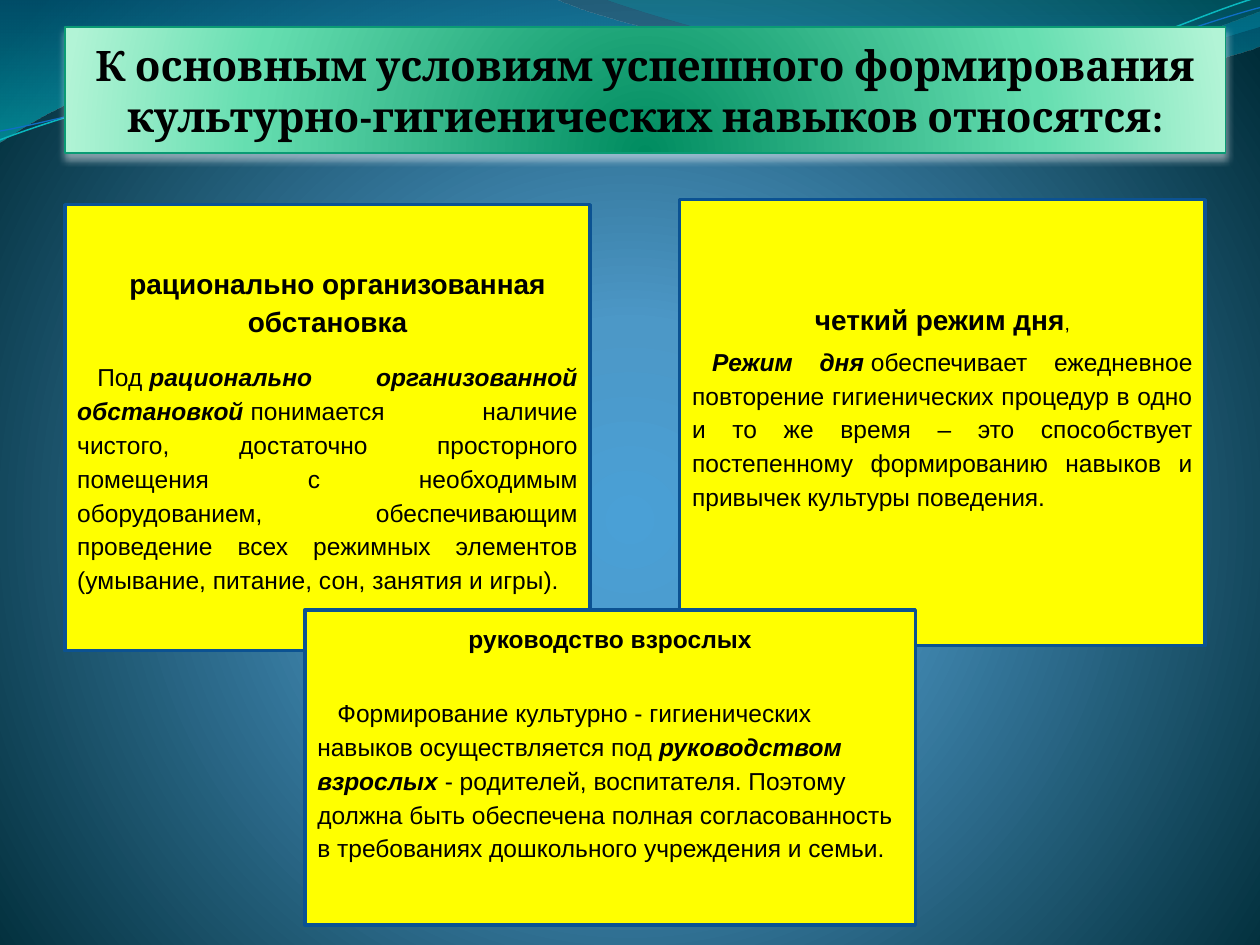
import math

from lxml import etree
from pptx import Presentation
from pptx import util as u
from pptx.dml.color import RGBColor
from pptx.enum import shapes, text
from pptx.oxml.ns import qn

BLACK = RGBColor(0x00, 0x00, 0x00)
WHITE = RGBColor(0xFF, 0xFF, 0xFF)
YELLOW = RGBColor(0xFF, 0xFF, 0x00)
NAVY = RGBColor(0x0B, 0x52, 0x92)
SKY = RGBColor(0x4A, 0xA0, 0xD6)
STEEL = RGBColor(0x4C, 0x98, 0xC7)
DEEP = RGBColor(0x00, 0x2C, 0x38)
OCEAN = RGBColor(0x00, 0x74, 0xA1)
CYAN = RGBColor(0x00, 0xC6, 0xCF)
TEAL = RGBColor(0x00, 0xA1, 0xA9)
AZURE = RGBColor(0x00, 0x8B, 0xBF)
AQUA = RGBColor(0x0A, 0xB8, 0xBF)
BLUE = RGBColor(0x0F, 0x6F, 0xC6)
GREEN = RGBColor(0x00, 0x8C, 0x60)
MINT = RGBColor(0x65, 0xDE, 0xB0)
PALE = RGBColor(0xB2, 0xF4, 0xD6)
EMERALD = RGBColor(0x0A, 0x9B, 0x74)

COLUMNS, ROWS = 100, 75
PLAIN, BOLD, STRONG = (False, False), (True, False), (True, True)
HARD_SPACE = chr(160)


def add_node(parent, tag, **attributes):
    return etree.SubElement(parent, qn(tag), {k: str(v) for k, v in attributes.items()})


def add_color(parent, color, opacity):
    node = add_node(parent, "a:srgbClr", val=color)
    if opacity < 100:
        add_node(node, "a:alpha", val=opacity * 1000)


def gradient(stops, focus=None):
    fill = etree.Element(qn("a:gradFill"), {"rotWithShape": "1"})
    stop_list = add_node(fill, "a:gsLst")
    for position, color, opacity in stops:
        add_color(add_node(stop_list, "a:gs", pos=position * 1000), color, opacity)
    if focus:
        area = add_node(fill, "a:path", path="circle")
        sides = {side: share * 1000 for side, share in zip("ltrb", focus)}
        add_node(area, "a:fillToRect", **sides)
    else:
        add_node(fill, "a:lin", ang=5400000, scaled=0)
    return fill


def turn(point, center, degrees):
    angle = math.radians(degrees)
    x, y = point[0] - center[0], point[1] - center[1]
    return (center[0] + x * math.cos(angle) - y * math.sin(angle),
            center[1] + x * math.sin(angle) + y * math.cos(angle))


class SlideBuilder:
    body_font = "Arial"
    title_font = "Cambria"
    spacing = 1.15
    indent = u.Inches(0.16)
    tilt = 2.7

    def __init__(self, deck):
        self.page = deck.slides.add_slide(deck.slide_layouts[6])
        self.column = deck.slide_width / COLUMNS
        self.row = deck.slide_height / ROWS

    def place(self, x, y):
        return round(x * self.column), round(y * self.row)

    def paint(self, shape, fill):
        shape.fill.gradient()
        old = shape._element.spPr.find(qn("a:gradFill"))
        old.getparent().replace(old, fill)

    def backdrop(self, stops, focus):
        self.page.background.fill.solid()
        holder = self.page.element.find(".//" + qn("p:bgPr"))
        holder.replace(holder[0], gradient(stops, focus))

    def outline(self, start, segments, close):
        points = [self.place(*point) for segment in segments for point in segment]
        builder = self.page.shapes.build_freeform(*self.place(*start))
        builder.add_line_segments(points, close=close)
        shape = builder.convert_to_shape()
        shape.shadow.inherit = False
        steps = iter(list(shape._element.iter(qn("a:lnTo"))))
        for segment in segments:
            nodes = [next(steps) for _ in segment]
            if len(nodes) == 3:
                curve = etree.Element(qn("a:cubicBezTo"))
                nodes[0].addprevious(curve)
                for node in nodes:
                    curve.append(node[0])
                    node.getparent().remove(node)
        return shape

    def wave(self, start, segments, fill):
        shape = self.outline(start, segments, True)
        self.paint(shape, fill)
        shape.line.fill.background()

    def ripple(self, start, curves, center, color, width):
        curves = [[turn(point, center, self.tilt) for point in curve] for curve in curves]
        shape = self.outline(turn(start, center, self.tilt), curves, False)
        shape.rotation = 360 - self.tilt
        shape.fill.background()
        shape.line.color.rgb = color
        shape.line.width = u.Pt(width)

    def panel(self, x, y, width, height, line=NAVY, weight=2):
        box = self.page.shapes.add_shape(
            shapes.MSO_SHAPE.RECTANGLE, *self.place(x, y), *self.place(width, height))
        box.shadow.inherit = False
        box.fill.solid()
        box.fill.fore_color.rgb = YELLOW
        box.line.color.rgb = line
        box.line.width = u.Pt(weight)
        box.text_frame.word_wrap = True
        box.text_frame.vertical_anchor = text.MSO_ANCHOR.MIDDLE
        return box

    def paragraph(self, box, spans, align, before=0, after=0, indent=0, spacing=spacing, font=body_font):
        frame = box.text_frame
        para = frame.add_paragraph() if frame.text else frame.paragraphs[0]
        para.alignment = align
        para.line_spacing = spacing
        para.space_before = u.Pt(before)
        para.space_after = u.Pt(after)
        para._p.get_or_add_pPr().set("indent", str(int(indent)))
        for words, size, (bold, italic) in spans:
            span = para.add_run()
            span.text = words
            span.font.name = font
            span.font.size = u.Pt(size)
            span.font.bold = bold
            span.font.italic = italic
            span.font.color.rgb = BLACK

    def body(self, box, spans, align, before=3.8):
        self.paragraph(box, spans, align, before, 7.5, self.indent)

    def shade(self, box, color, opacity, blur, distance):
        effects = box._element.spPr.find(qn("a:effectLst"))
        shadow = add_node(effects, "a:outerShdw", blurRad=u.Pt(blur), dist=u.Pt(distance),
                          dir=5400000, rotWithShape=0)
        add_color(shadow, color, opacity)


def main():
    deck = Presentation()
    deck.slide_width, deck.slide_height = u.Inches(10), u.Inches(7.5)
    slide = SlideBuilder(deck)
    left, center, justify = text.PP_ALIGN.LEFT, text.PP_ALIGN.CENTER, text.PP_ALIGN.JUSTIFY

    slide.backdrop([(0, SKY, 100), (25, STEEL, 100), (100, DEEP, 100)], (10, 110, 10, 100))
    slide.wave((0, 0), [
        [(44, -0.1)],
        [(47.6, 1.7), (66.4, 6.3), (75.8, 6.3)], [(85.3, 6.3), (95.8, 2.6), (100, 0.9)],
        [(100.1, 3.6)],
        [(98.3, 4.4), (87, 7.6), (74.6, 7.5)], [(62.2, 7.5), (38.2, 2.8), (25.7, 3.4)],
        [(12.9, 3.6), (4.6, 8.3), (-0.1, 11.3)], [(0, 0)]],
        gradient([(0, OCEAN, 45), (100, CYAN, 55)]))
    slide.wave((47.9, -0.1), [
        [(50.9, 1.1), (68.2, 6.2), (76.9, 6.5)], [(85.6, 6.9), (96.1, 3.2), (100, 2.1)],
        [(100, 0)], [(47.9, -0.1)]],
        gradient([(0, TEAL, 30), (80, AZURE, 45)]))
    slide.ripple((0, 11.1), [
        [(4.8, 9.3), (15.8, 5.7), (27.7, 5.2)], [(39.5, 4.7), (59.3, 8.9), (71.3, 8)],
        [(83.3, 7.1), (93.8, 1.5), (99.8, -0.2)]], (49.9, 5.75), AQUA, 0.85)
    slide.ripple((0, 10.4), [
        [(4.7, 9.6), (16.4, 6.1), (28.3, 5.6)], [(40.3, 5.1), (59.7, 8.4), (71.7, 7.5)],
        [(83.6, 6.7), (94.1, 2.1), (100, 0.6)]], (49.95, 5.9), BLUE, 0.75)

    setting = slide.panel(5.15, 16.25, 41.7, 35.4)
    slide.body(setting, [("рационально организованная обстановка", 16, BOLD)], center)
    slide.body(setting, [
        ("Под" + HARD_SPACE, 14, PLAIN),
        ("рационально организованной обстановкой", 14, STRONG),
        (HARD_SPACE + "понимается наличие чистого, достаточно просторного помещения с "
         "необходимым оборудованием, обеспечивающим проведение всех режимных элементов "
         "(умывание, питание, сон, занятия и игры).", 14, PLAIN)], justify)

    title = slide.panel(5.15, 2.15, 92.1, 10, EMERALD, 0.75)
    slide.paint(title, gradient([(0, GREEN, 100), (68, MINT, 100), (100, PALE, 100)],
                                (50, 130, 50, -30)))
    slide.shade(title, WHITE, 48, 4.5, 3)
    slide.paragraph(title, [("К основным условиям успешного формирования "
                             "культурно-гигиенических навыков относятся:", 24, BOLD)],
                    center, spacing=1.0, font=slide.title_font)

    routine = slide.panel(53.95, 15.85, 41.7, 35.4)
    routine.text_frame.margin_bottom = u.Inches(0.34)
    slide.paragraph(routine, [("четкий режим дня", 16, BOLD), (",", 11, PLAIN)], center)
    slide.body(routine, [
        ("Режим дня", 14, STRONG),
        (HARD_SPACE + "обеспечивает ежедневное повторение гигиенических процедур в одно и то "
         "же время – это способствует постепенному формированию навыков и привычек "
         "культуры поведения.", 14, PLAIN)], justify)

    guidance = slide.panel(24.2, 48.4, 48.45, 25)
    guidance.text_frame.vertical_anchor = text.MSO_ANCHOR.TOP
    guidance.text_frame.margin_top = u.Inches(0.08)
    slide.paragraph(guidance, [("руководство взрослых", 14, BOLD)], center)
    slide.body(guidance, [
        ("Формирование культурно - гигиенических навыков осуществляется под ", 14, PLAIN),
        ("руководством взрослых" + HARD_SPACE, 14, STRONG),
        ("- родителей, воспитателя. Поэтому должна быть обеспечена полная согласованность "
         "в требованиях дошкольного учреждения и семьи.", 14, PLAIN)], left, before=23)

    deck.save("out.pptx")


if __name__ == "__main__":
    main()
